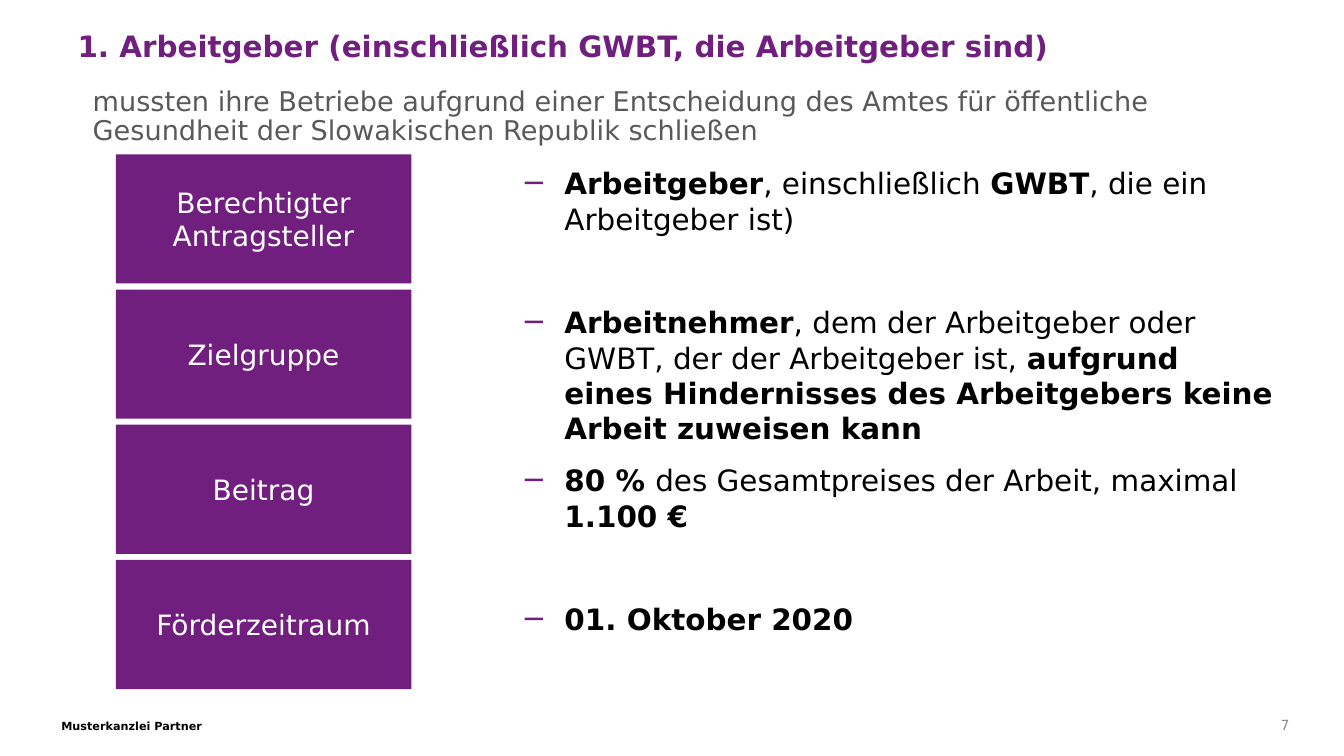
from lxml.etree import SubElement
from pptx import Presentation
from pptx.dml.color import RGBColor
from pptx.enum.shapes import MSO_SHAPE
from pptx.enum.text import MSO_ANCHOR, MSO_AUTO_SIZE, PP_ALIGN
from pptx.oxml.ns import qn
from pptx.util import Pt

FONT = "DejaVu Sans"
PURPLE, BLACK, WHITE = "711F7E", "000000", "FFFFFF"
GREY, LIGHT_GREY = "595959", "8C8C8C"

LABELS = ["Berechtigter Antragsteller", "Zielgruppe", "Beitrag", "Förderzeitraum"]

# Space before each item, then its runs as (text, bold)
ITEMS = [
    (0, [("Arbeitgeber", True), (", einschließlich ", False), ("GWBT", True),
         (", die ein Arbeitgeber ist)", False)]),
    (49, [("Arbeitnehmer", True),
          (", dem der Arbeitgeber oder GWBT, der der Arbeitgeber ist, ", False),
          ("aufgrund eines Hindernisses des Arbeitgebers keine Arbeit zuweisen kann", True)]),
    (12, [("80 % ", True), ("des Gesamtpreises der Arbeit, maximal ", False),
          ("1.100 €", True)]),
    (49, [("01. Oktober 2020", True)]),
]


def color(value):
    return RGBColor.from_string(value)


def style(r, size, value, bold=False):
    r.font.name, r.font.size, r.font.bold = FONT, Pt(size), bold
    r.font.color.rgb = color(value)


def place(sp, left, top, width, height, anchor):
    sp.left, sp.top, sp.width, sp.height = Pt(left), Pt(top), Pt(width), Pt(height)
    tf = sp.text_frame
    tf.word_wrap, tf.auto_size, tf.vertical_anchor = True, MSO_AUTO_SIZE.NONE, anchor
    return tf


def set_line(tf, text, size, value, bold=False, align=PP_ALIGN.LEFT, spacing=1.0):
    tf.text = text
    p = tf.paragraphs[0]
    p.alignment, p.line_spacing, p.space_before = align, spacing, Pt(0)
    style(p.runs[0], size, value, bold)
    return p


def set_bullet(p, indent, char=None):
    pPr = p._p.get_or_add_pPr()
    pPr.set("marL", str(Pt(indent)))
    pPr.set("indent", str(-Pt(indent)))
    if char is None:
        SubElement(pPr, qn("a:buNone"))
        return
    clr = SubElement(pPr, qn("a:buClr"))
    SubElement(clr, qn("a:srgbClr"), val=PURPLE)
    SubElement(pPr, qn("a:buFont"), typeface=FONT)
    SubElement(pPr, qn("a:buChar"), char=char)


def add_heading(title, subtitle, left, top, width):
    tf = place(title, left, top, width, 26, MSO_ANCHOR.MIDDLE)
    set_line(tf, "1. Arbeitgeber (einschließlich GWBT, die Arbeitgeber sind)",
             21, PURPLE, True, spacing=0.9)
    tf = place(subtitle, left + 10.8, top + 38, width, 52, MSO_ANCHOR.TOP)
    p = set_line(tf, "mussten ihre Betriebe aufgrund einer Entscheidung des Amtes für "
                 "öffentliche Gesundheit der Slowakischen Republik schließen",
                 19.4, GREY, spacing=0.9)
    set_bullet(p, 0)


def add_labels(slide, left, top, width, height, pitch):
    for i, label in enumerate(LABELS):
        sp = slide.shapes.add_shape(MSO_SHAPE.RECTANGLE, Pt(left), Pt(top + i * pitch),
                                    Pt(width), Pt(height))
        sp.shadow.inherit = False
        sp.fill.solid()
        sp.fill.fore_color.rgb = color(PURPLE)
        sp.line.fill.background()
        tf = sp.text_frame
        tf.word_wrap, tf.vertical_anchor = True, MSO_ANCHOR.MIDDLE
        set_line(tf, label, 20, WHITE, align=PP_ALIGN.CENTER)


def add_details(body, left, top, width, height):
    tf = place(body, left, top, width, height, MSO_ANCHOR.TOP)
    for i, (gap, runs) in enumerate(ITEMS):
        p = tf.paragraphs[0] if i == 0 else tf.add_paragraph()
        p.space_before, p.line_spacing = Pt(gap), 1.0
        set_bullet(p, 28.1, "─")
        for text, bold in runs:
            r = p.add_run()
            r.text = text
            style(r, 21, BLACK, bold)


def add_footer(slide, left, top, width):
    sp = slide.shapes.add_textbox(0, 0, 0, 0)
    tf = place(sp, left, top + 3.5, 166, 17, MSO_ANCHOR.TOP)
    set_line(tf, "Musterkanzlei Partner", 8, BLACK, True)
    sp = slide.shapes.add_textbox(0, 0, 0, 0)
    tf = place(sp, left + width - 83.5, top, 83.5, 21.6, MSO_ANCHOR.MIDDLE)
    set_line(tf, "7", 10, LIGHT_GREY, align=PP_ALIGN.RIGHT)


def main():
    prs = Presentation()
    prs.slide_width, prs.slide_height = Pt(960), Pt(540)
    slide = prs.slides.add_slide(prs.slide_layouts[3])  # title and two bodies
    title, subtitle, body = slide.placeholders

    add_heading(title, subtitle, 48.2, 21, 869)
    add_labels(slide, 82.8, 110.2, 211, 92.2, 96.6)
    add_details(body, 367.9, 114.5, 549.4, 374.4)
    add_footer(slide, 36.7, 507, 891.4)
    prs.save("out.pptx")


if __name__ == "__main__":
    main()
